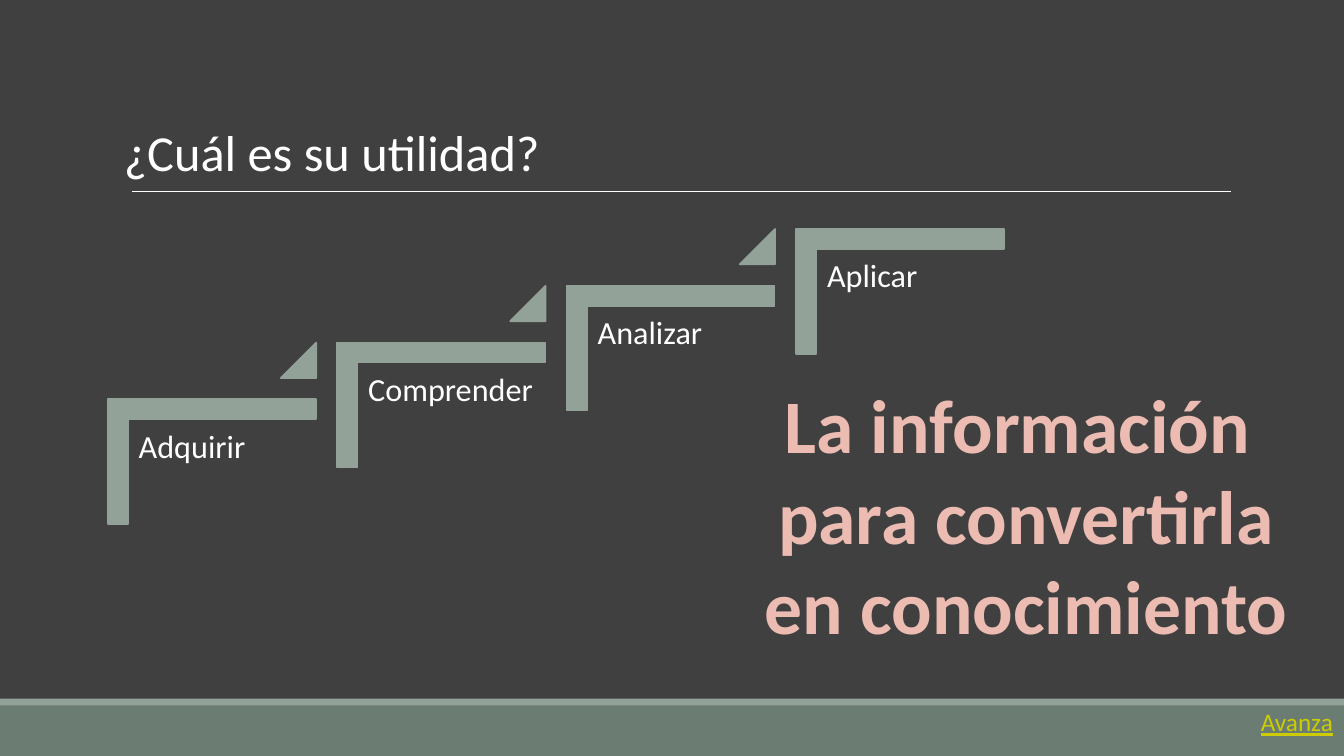
from lxml import etree
from pptx import Presentation
from pptx.dml.color import RGBColor
from pptx.enum.shapes import MSO_CONNECTOR, MSO_SHAPE
from pptx.enum.text import MSO_AUTO_SIZE, PP_ALIGN
from pptx.oxml import parse_xml
from pptx.oxml.ns import qn
from pptx.util import Pt

STRAIGHT = MSO_CONNECTOR.STRAIGHT
RECTANGLE = MSO_SHAPE.RECTANGLE
CORNER = MSO_SHAPE.CORNER
TRIANGLE = MSO_SHAPE.ISOSCELES_TRIANGLE
GROW = MSO_AUTO_SIZE.SHAPE_TO_FIT_TEXT
FIXED = MSO_AUTO_SIZE.NONE
LEFT = PP_ALIGN.LEFT
CENTER = PP_ALIGN.CENTER

SAGE = "93A299"
WHITE = "FFFFFF"
color = RGBColor.from_string

presentation = Presentation()
presentation.slide_width = Pt(960)
presentation.slide_height = Pt(540)
slide = presentation.slides.add_slide(presentation.slide_layouts[6])
slide.background.fill.solid()
slide.background.fill.fore_color.rgb = color("404040")


def add_filled(kind, left, top, width, height, fill, outline=0):
    """Add a preset shape; an outline width of 0 means no line."""
    shape = slide.shapes.add_shape(kind, Pt(left), Pt(top), Pt(width), Pt(height))
    shape.shadow.inherit = False
    shape.fill.solid()
    shape.fill.fore_color.rgb = color(fill)
    if outline:
        shape.line.color.rgb = color(fill)
        shape.line.width = Pt(outline)
    else:
        shape.line.fill.background()
    return shape


def add_text(lines, left, top, width, height, size, hue, wrap=True,
             align=LEFT, auto_size=GROW):
    """Add a text box with one paragraph per line."""
    box = slide.shapes.add_textbox(Pt(left), Pt(top), Pt(width), Pt(height))
    frame = box.text_frame
    frame.word_wrap = wrap
    frame.auto_size = auto_size
    for index, line in enumerate(lines):
        paragraph = frame.add_paragraph() if index else frame.paragraphs[0]
        paragraph.alignment = align
        run = paragraph.add_run()
        run.text = line
        run.font.name = "Calibri"
        run.font.size = Pt(size)
        run.font.color.rgb = color(hue)
    return frame


# Title rule and footer bands
rule = slide.shapes.add_connector(STRAIGHT, Pt(94.3), Pt(136.8), Pt(879.1), Pt(136.8))
rule.line.color.rgb = color(WHITE)
rule.line.width = Pt(0.5)
etree.SubElement(rule.element.spPr, qn("a:effectLst"))
add_filled(RECTANGLE, 0, 504, 960, 36, "6B7D72")
add_filled(RECTANGLE, 0, 499, 960, 5, SAGE)

add_text(["¿Cuál es su utilidad?"], 81.4, 82.8, 346.3, 51.1, 36, WHITE)

# Staircase: each step is one run to the right and one rise up
STEP_RUN, STEP_RISE = 163.9, 40.6
steps = ["Adquirir", "Comprender", "Analizar", "Aplicar"]
for index, step in enumerate(steps):
    across = index * STEP_RUN
    up = index * STEP_RISE
    corner = add_filled(CORNER, 106.6 + across, 255.6 - up, 89.3, 148.5, SAGE, 1.25)
    corner.rotation = 90
    corner.adjustments[0] = 0.161
    corner.adjustments[1] = 0.161

    label = add_text([step], 92 + across, 300.2 - up, 134, 117.4, 23, WHITE,
                     auto_size=FIXED)
    label.margin_left = label.margin_right = Pt(7.2)
    label.margin_top = label.margin_bottom = Pt(7.2)
    label.paragraphs[0].line_spacing = 0.9

    if index < len(steps) - 1:
        triangle = add_filled(TRIANGLE, 200.6 + across, 244.8 - up, 25.2, 25.2, SAGE, 1.25)
        triangle.adjustments[0] = 1

# Closing message with outlined letters
message = add_text(["La información ", "para convertirla", "en conocimiento"],
                   537.1, 266.4, 391.7, 203.8, 54, "ECBBB2", wrap=False, align=CENTER)
for paragraph in message.paragraphs:
    font = paragraph.runs[0].font
    font.bold = True
    outline = parse_xml(
        '<a:ln xmlns:a="http://schemas.openxmlformats.org/drawingml/2006/main" w="22225">'
        '<a:solidFill><a:srgbClr val="CF543F"/></a:solidFill></a:ln>')
    paragraph.runs[0].font.fill
    paragraph.runs[0]._r.get_or_add_rPr().insert(0, outline)

forward = add_text(["Avanza"], 893.5, 501.1, 66.2, 29.1, 18, "CCCC00", wrap=False)
forward.paragraphs[0].runs[0].font.underline = True

presentation.save("out.pptx")
